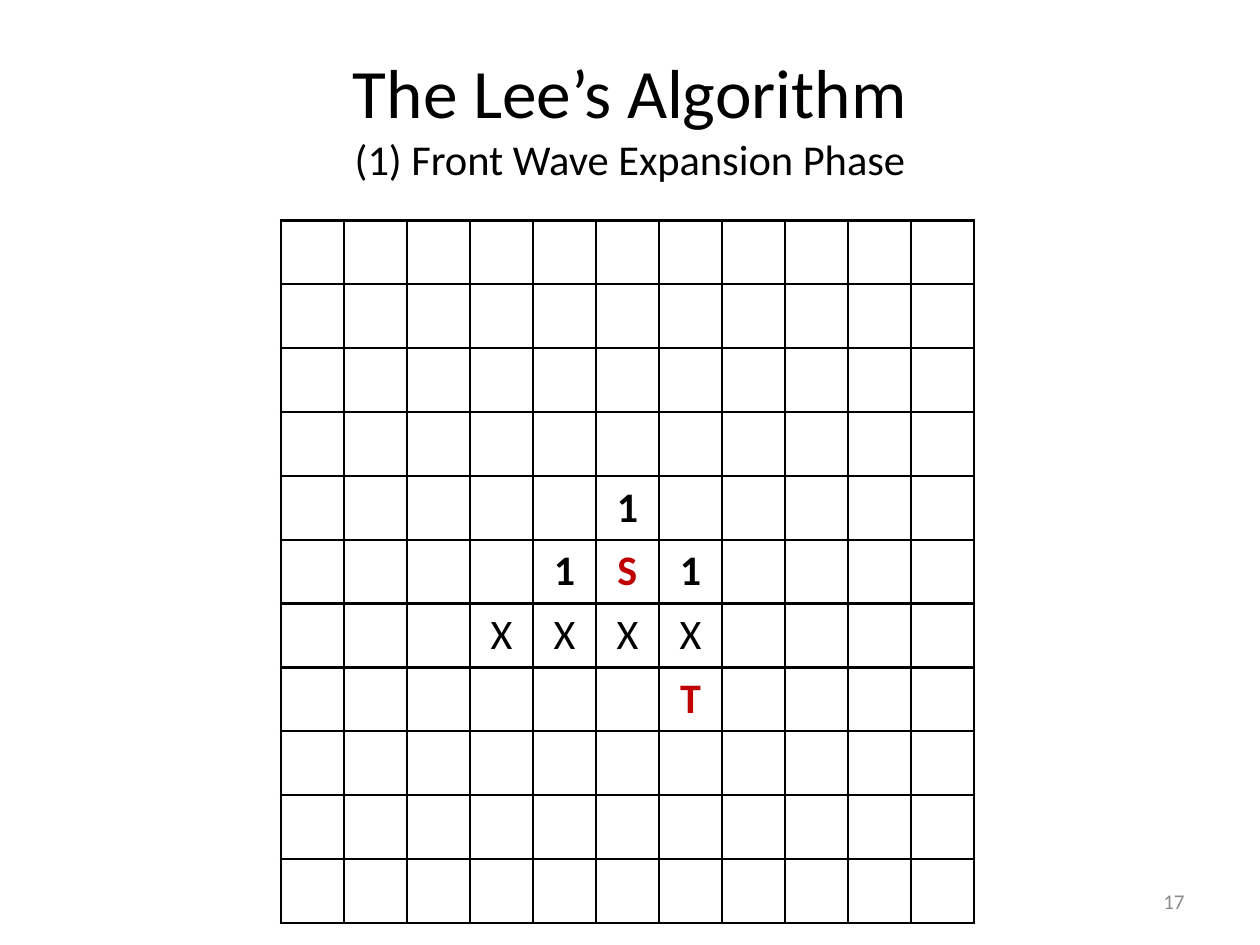
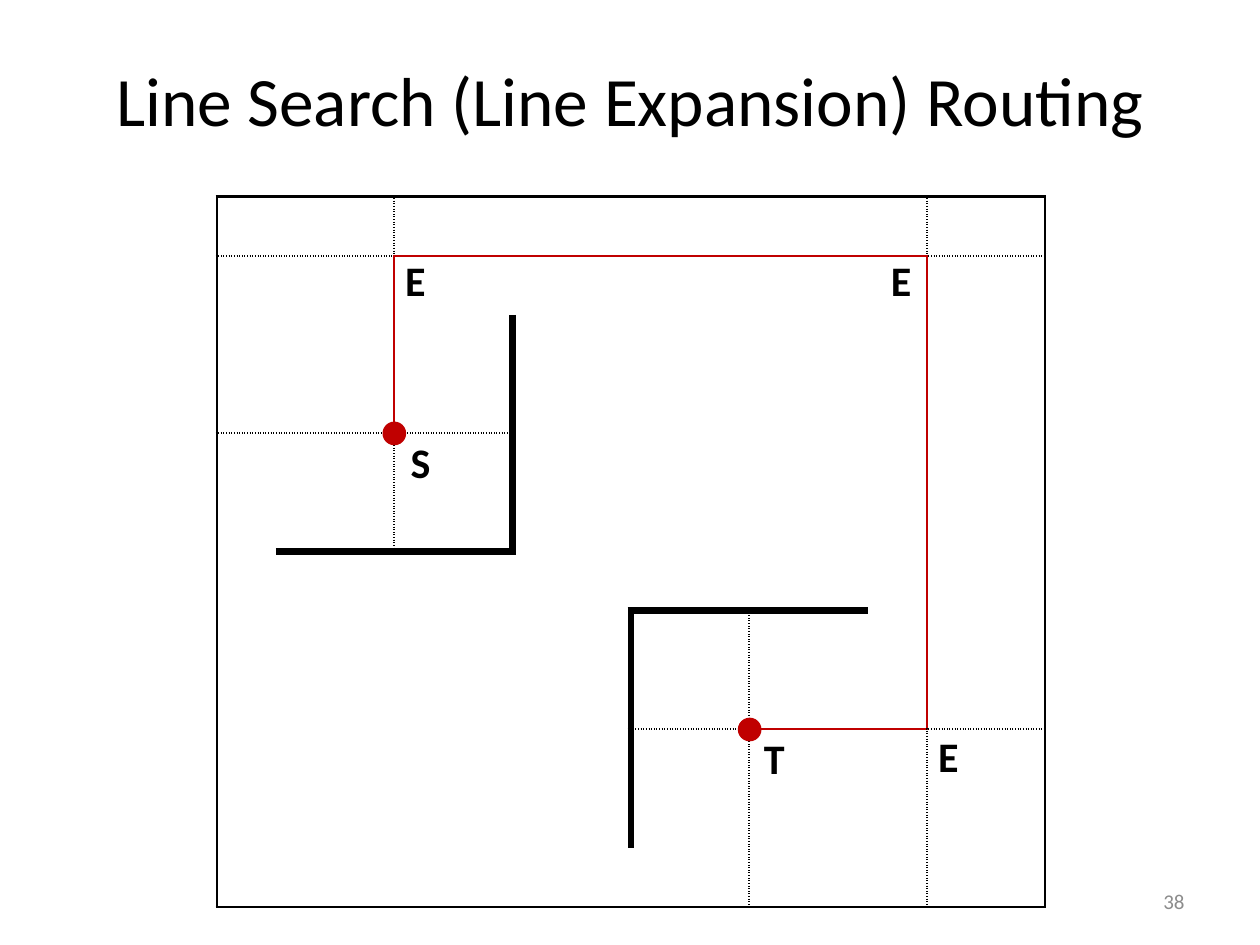
from lxml.etree import SubElement
from pptx import Presentation
from pptx.dml.color import RGBColor
from pptx.enum.shapes import MSO_SHAPE
from pptx.enum.text import MSO_ANCHOR, MSO_AUTO_SIZE, PP_ALIGN
from pptx.oxml.ns import qn
from pptx.util import Pt

COLORS = {"ink": "000000", "route": "C00000", "page": "FFFFFF", "number": "8C8C8C"}
FONT = "Calibri"
NO_TABLE_STYLE = "{2D5ABB26-0587-4C30-8999-92F81FD0307C}"

TITLE_SIZE = 39.6
TITLE_FORMAT = {"vertical_anchor": MSO_ANCHOR.MIDDLE, "auto_size": MSO_AUTO_SIZE.NONE}
NUMBER_FORMAT = {"vertical_anchor": MSO_ANCHOR.MIDDLE, "word_wrap": True}
LABEL_FORMAT = {"auto_size": MSO_AUTO_SIZE.SHAPE_TO_FIT_TEXT, "word_wrap": True}
NUMBER_BOX = (516, 500.4, 168, 28.8)

LINE_STYLES = {
    "frame": ("ink", 1.5, "solid"),
    "probe": ("ink", 1.5, "sysDot"),
    "route": ("route", 1.5, "solid"),
    "wall": ("ink", 4.5, "solid"),
}

WAVE_TITLE = [("The Lee’s Algorithm", TITLE_SIZE), ("(1) Front Wave Expansion Phase", 24.3)]
WAVE_COUNT = 11
WAVE_GRID = {
    "left": 160.5, "top": 126, "columns": WAVE_COUNT, "rows": WAVE_COUNT,
    "column_width": 36, "row_height": 36.5,
}
WAVE_MARKS = {
    (4, 5): "1",
    (5, 4): "1", (5, 5): "S", (5, 6): "1",
    (6, 3): "X", (6, 4): "X", (6, 5): "X", (6, 6): "X",
    (7, 6): "T",
}
WAVE_LINES = [
    line
    for i in range(WAVE_COUNT + 1)
    for line in (("frame", (0, i), (WAVE_COUNT, i)), ("frame", (i, 0), (i, WAVE_COUNT)))
]

SEARCH_TITLE = [("Line Search (Line Expansion) Routing", TITLE_SIZE)]
SEARCH_GRID = {
    "left": 123.84, "top": 112.32, "columns": 14, "rows": 12,
    "column_width": 33.84, "row_height": 33.84,
}
SEARCH_LINES = [
    ("frame", (0, 0), (14, 0)),
    ("frame", (0, 12), (14, 12)),
    ("frame", (0, 0), (0, 12)),
    ("frame", (14, 0), (14, 12)),
    ("probe", (0, 1), (3, 1)),
    ("probe", (12, 1), (14, 1)),
    ("probe", (0, 4), (5, 4)),
    ("probe", (7, 9), (9, 9)),
    ("probe", (12, 9), (14, 9)),
    ("probe", (3, 0), (3, 1)),
    ("probe", (3, 4), (3, 6)),
    ("probe", (9, 7), (9, 12)),
    ("probe", (12, 0), (12, 1)),
    ("probe", (12, 9), (12, 12)),
    ("route", (3, 1), (3, 4)),
    ("route", (3, 1), (12, 1)),
    ("route", (12, 1), (12, 9)),
    ("route", (9, 9), (12, 9)),
    ("wall", (5, 2), (5, 6)),
    ("wall", (1, 6), (5, 6)),
    ("wall", (7, 7), (11, 7)),
    ("wall", (7, 7), (7, 11)),
]
TERMINALS = [(9, 9), (3, 4)]
TERMINAL_SIZE = 11.5
LABELS = [
    ("S", (3, 4), (1, -2)),
    ("T", (9, 9), (0, -2)),
    ("E", (12, 1), (-29, -4)),
    ("E", (12, 9), (-2, -3)),
    ("E", (3, 1), (-2, -4)),
]
LABEL_SIZE = (28, 36)


def apply(target, values):
    for name, value in values.items():
        setattr(target, name, value)


def color(name):
    return RGBColor.from_string(COLORS[name])


def points(*values):
    return [Pt(value) for value in values]


def add_run(paragraph, text, size, ink="ink", bold=False):
    run = paragraph.add_run()
    run.text = text
    apply(run.font, {"name": FONT, "size": Pt(size), "bold": bold})
    run.font.color.rgb = color(ink)


def add_text(slide, box, frame_format, align, *run):
    frame = slide.shapes.add_textbox(*points(*box)).text_frame
    apply(frame, frame_format)
    frame.paragraphs[0].alignment = align
    add_run(frame.paragraphs[0], *run)


def add_slide(deck, lines, title_top, number):
    slide = deck.slides.add_slide(deck.slide_layouts[5])
    title = slide.shapes.title
    apply(title, dict(zip(("left", "top", "width", "height"), points(36, title_top, 648, 90))))
    apply(title.text_frame, TITLE_FORMAT)
    paragraph = title.text_frame.paragraphs[0]
    paragraph.alignment = PP_ALIGN.CENTER
    for i, (text, size) in enumerate(lines):
        if i:
            paragraph.add_line_break()
        add_run(paragraph, text, size)
    for line_break in paragraph._p.findall(qn("a:br")):
        SubElement(line_break, qn("a:rPr"), sz=str(round(TITLE_SIZE * 100)))
    add_text(slide, NUMBER_BOX, NUMBER_FORMAT, PP_ALIGN.RIGHT, number, 12, "number")
    return slide


def cell_edges(lines):
    edges = {}
    for style, (x1, y1), (x2, y2) in lines:
        for x in range(x1, x2):
            edges[y1, x, "T"] = edges[y1 - 1, x, "B"] = style
        for y in range(y1, y2):
            edges[y, x1, "L"] = edges[y, x1 - 1, "R"] = style
    return edges


def draw_edge(cell, side, style):
    line = SubElement(cell._tc.get_or_add_tcPr(), qn(f"a:ln{side}"))
    if style is None:
        SubElement(line, qn("a:noFill"))
        return
    ink, width, dash = LINE_STYLES[style]
    line.set("w", str(Pt(width)))
    fill = SubElement(line, qn("a:solidFill"))
    SubElement(fill, qn("a:srgbClr"), val=COLORS[ink])
    SubElement(line, qn("a:prstDash"), val=dash)


def add_grid(slide, grid, lines, marks, text_size):
    rows, columns = grid["rows"], grid["columns"]
    width, height = grid["column_width"], grid["row_height"]
    box = points(grid["left"], grid["top"], columns * width, rows * height)
    table = slide.shapes.add_table(rows, columns, *box).table
    apply(table, {"first_row": False, "horz_banding": False})
    table._tbl.tblPr.find(qn("a:tableStyleId")).text = NO_TABLE_STYLE
    for column in table.columns:
        column.width = Pt(width)
    for row in table.rows:
        row.height = Pt(height)
    edges = cell_edges(lines)
    for y in range(rows):
        for x in range(columns):
            cell = table.cell(y, x)
            for side in "LRTB":
                draw_edge(cell, side, edges.get((y, x, side)))
            cell.fill.solid()
            cell.fill.fore_color.rgb = color("page")
            cell.vertical_anchor = MSO_ANCHOR.MIDDLE
            paragraph = cell.text_frame.paragraphs[0]
            paragraph.alignment = PP_ALIGN.CENTER
            mark = marks.get((y, x))
            if mark:
                ink = "route" if mark in "ST" else "ink"
                add_run(paragraph, mark, text_size, ink, mark != "X")
            else:
                SubElement(paragraph._p, qn("a:endParaRPr"), sz=str(text_size * 100))


def grid_point(grid, vertex):
    x, y = vertex
    return grid["left"] + x * grid["column_width"], grid["top"] + y * grid["row_height"]


def add_terminal(slide, vertex):
    x, y = grid_point(SEARCH_GRID, vertex)
    half = TERMINAL_SIZE / 2
    box = points(x - half, y - half, TERMINAL_SIZE, TERMINAL_SIZE)
    terminal = slide.shapes.add_shape(MSO_SHAPE.OVAL, *box)
    terminal.shadow.inherit = False
    terminal.fill.solid()
    terminal.fill.fore_color.rgb = color("route")
    terminal.line.color.rgb = color("route")
    terminal.line.width = Pt(2)


def main():
    deck = Presentation()
    apply(deck, {"slide_width": Pt(720), "slide_height": Pt(540)})

    wave = add_slide(deck, WAVE_TITLE, 21.6, "17")
    add_grid(wave, WAVE_GRID, WAVE_LINES, WAVE_MARKS, 24)

    search = add_slide(deck, SEARCH_TITLE, 11.5, "38")
    add_grid(search, SEARCH_GRID, SEARCH_LINES, {}, 18)
    for vertex in TERMINALS:
        add_terminal(search, vertex)
    for text, vertex, (dx, dy) in LABELS:
        x, y = grid_point(SEARCH_GRID, vertex)
        box = (x + dx, y + dy, *LABEL_SIZE)
        add_text(search, box, LABEL_FORMAT, PP_ALIGN.CENTER, text, 24, "ink", True)

    deck.save("out.pptx")


if __name__ == "__main__":
    main()
